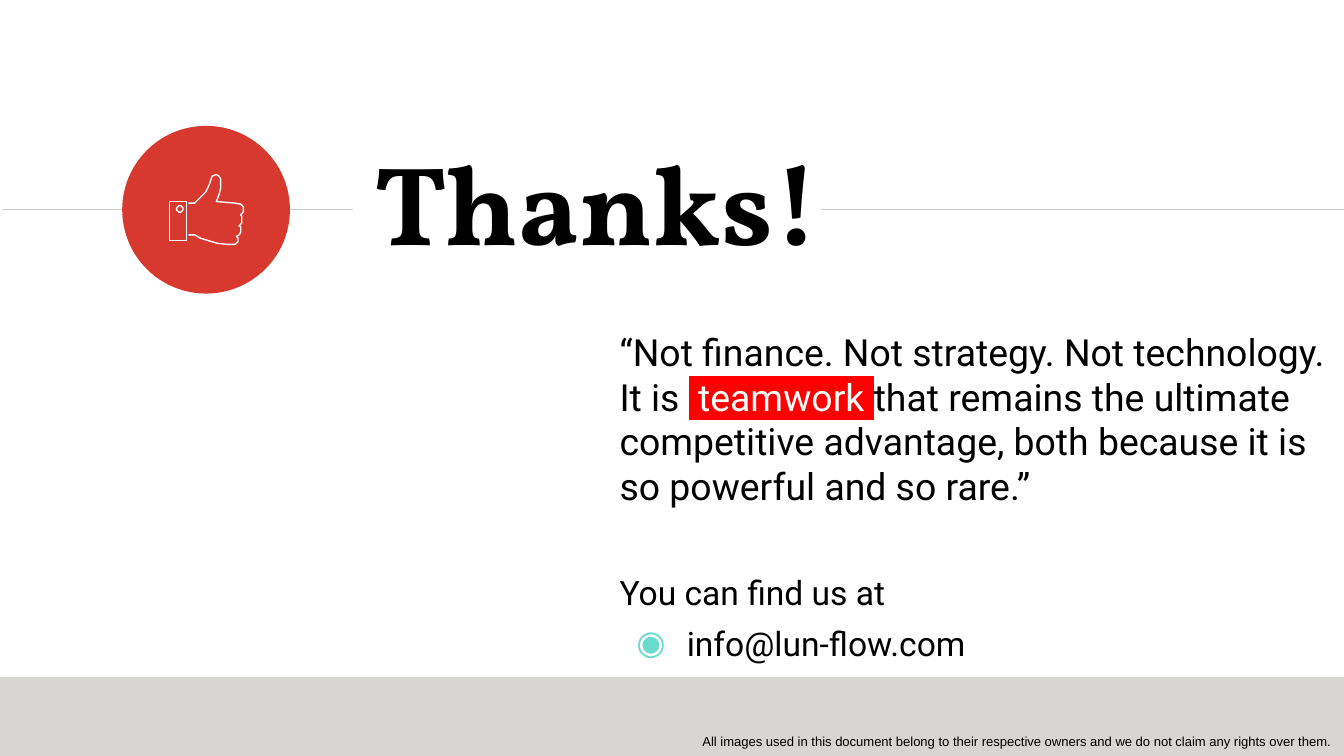
"""Build the closing slide with a thumbs-up badge, a quote and contact details."""
from math import cos, pi, sin

from lxml.etree import SubElement
from pptx import Presentation
from pptx.dml.color import RGBColor
from pptx.enum.shapes import MSO_CONNECTOR, MSO_SHAPE
from pptx.enum.text import MSO_ANCHOR, MSO_AUTO_SIZE, PP_ALIGN
from pptx.oxml import parse_xml
from pptx.oxml.ns import nsdecls, qn
from pptx.util import Cm, Pt

HUES = {"black": "000000", "white": "FFFFFF", "red": "D7392E", "mark": "FF0000",
        "band": "D8D6D2", "rule": "CCCCCC", "mint": "69DBCD"}
FONTS = {
    "title": {"name": "Vollkorn", "size": Pt(60), "bold": True},
    "quote": {"name": "Roboto", "size": Pt(20)},
    "find": {"name": "Roboto", "size": Pt(18)},
    "note": {"name": "Arial", "size": Pt(7)},
}


def add_box(left, top, width, height, **frame):
    box = slide.shapes.add_textbox(Cm(left), Cm(top), Cm(width), Cm(height))
    for key, val in frame.items():
        setattr(box.text_frame, key, val)
    return box.text_frame


def add_run(para, text, style, hue="black", mark=None):
    run = para.add_run()
    run.text = text
    run.font.fill.solid()
    run.font.fill.fore_color.rgb = RGBColor.from_string(HUES[hue])
    if mark:
        light = parse_xml(f'<a:highlight {nsdecls("a")}><a:srgbClr val="{HUES[mark]}"/></a:highlight>')
        run.font._element.find(qn("a:solidFill")).addnext(light)
    for key, val in FONTS[style].items():
        setattr(run.font, key, val)


deck = Presentation()
deck.slide_width, deck.slide_height = Cm(25.4), Cm(14.29)
slide = deck.slides.add_slide(deck.slide_layouts[6])

pad = {f"margin_{side}": Cm(0.25) for side in ("left", "top", "right", "bottom")}

for start, end in ((0.03, 6.68), (15.52, 25.4)):
    rule = slide.shapes.add_connector(MSO_CONNECTOR.STRAIGHT, Cm(start), Cm(3.96), Cm(end), Cm(3.96))
    rule.line.color.rgb = RGBColor.from_string(HUES["rule"])
    rule.line.width = Pt(0.75)
    SubElement(rule._element.spPr, qn("a:effectLst"))

for kind, hue, area in (
    (MSO_SHAPE.RECTANGLE, "band", (0, 12.8, 25.4, 1.49)),
    (MSO_SHAPE.OVAL, "red", (2.31, 2.38, 3.17, 3.17)),
):
    shape = slide.shapes.add_shape(kind, *map(Cm, area))
    shape.shadow.inherit = False
    shape.fill.solid()
    shape.fill.fore_color.rgb = RGBColor.from_string(HUES[hue])
    shape.line.fill.background()

cuff = [(320, 381), (320, 455), (353, 455), (353, 381), (320, 381)]
ring = [(340 + 6 * cos(k * pi / 12), 395 + 6 * sin(k * pi / 12)) for k in range(25)]
hand = [
    (356, 444), (368, 444), (378, 450), (394, 455), (411, 460), (429, 462), (444, 462), (450, 457),
    (450, 450), (447, 447), (452, 444), (455, 439), (455, 429), (452, 427), (457, 422), (457, 409),
    (455, 406), (460, 401), (460, 391), (455, 386), (444, 384), (409, 381), (414, 368), (417, 356),
    (417, 338), (414, 333), (409, 330), (401, 333), (396, 348), (389, 363), (368, 384), (356, 384),
]
for first, *rest in ([cuff, ring], [hand]):
    path_pen = slide.shapes.build_freeform(*first[0], scale=Cm(0.01))
    path_pen.add_line_segments(first[1:], close=False)
    for part in rest:
        path_pen.move_to(*part[0])
        path_pen.add_line_segments(part[1:], close=False)
    shape = path_pen.convert_to_shape()
    shape.shadow.inherit = False
    shape.fill.background()
    shape.line.color.rgb = RGBColor.from_string(HUES["white"])
    shape.line.width = Pt(0.75)

title = add_box(6.83, 2.18, 13.64, 3.23, word_wrap=True, vertical_anchor=MSO_ANCHOR.MIDDLE, **pad)
add_run(title.paragraphs[0], "Thanks!", "title")

body = add_box(11.46, 5.97, 13.94, 2.18, word_wrap=True, **pad)
quote = body.paragraphs[0]
for text, hue, mark in (
    ("“Not finance. Not strategy. Not technology. It is ", "black", None),
    (" ", "black", "mark"),
    ("teamwork", "white", "mark"),
    (" ", "black", "mark"),
    ("that remains the ultimate competitive advantage, both because it is so powerful and so rare.”",
     "black", None),
):
    add_run(quote, text, "quote", hue, mark)

find = body.add_paragraph()
find.space_before = Pt(34)
add_run(find, "You can find us at", "find")

mail = body.add_paragraph()
mail.space_before = Pt(6)
props = mail._p.get_or_add_pPr()
props.set("marL", str(Cm(1.27)))
props.set("indent", str(Cm(-0.95)))
SubElement(SubElement(props, qn("a:buClr")), qn("a:srgbClr"), val=HUES["mint"])
SubElement(props, qn("a:buFont"), typeface="Roboto")
SubElement(props, qn("a:buChar"), char="◉")
add_run(mail, "info@lun-flow.com", "find")

foot = add_box(12.83, 13.74, 12.57, 0.55, word_wrap=False, auto_size=MSO_AUTO_SIZE.SHAPE_TO_FIT_TEXT)
note = foot.paragraphs[0]
note.alignment = PP_ALIGN.RIGHT
add_run(note, "All images used in this document belong to their respective owners "
        "and we do not claim any rights over them.", "note")

deck.save("out.pptx")
